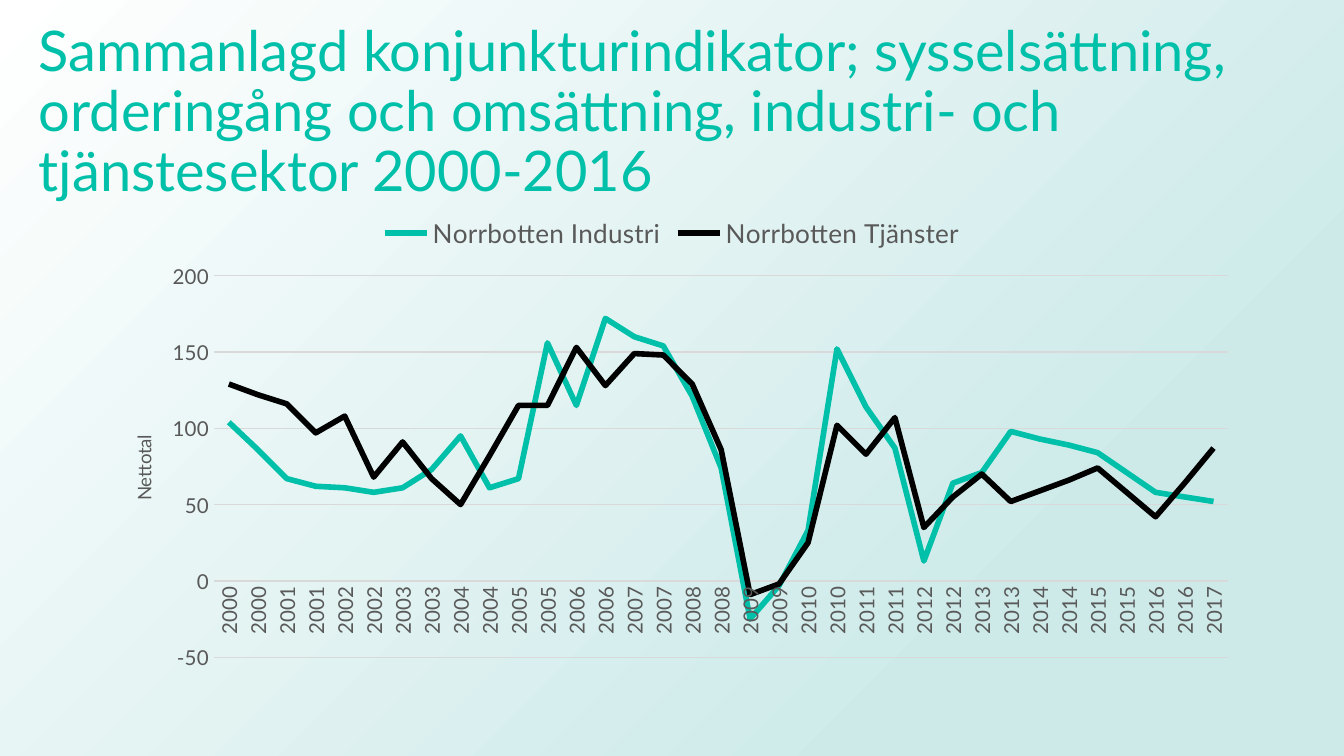
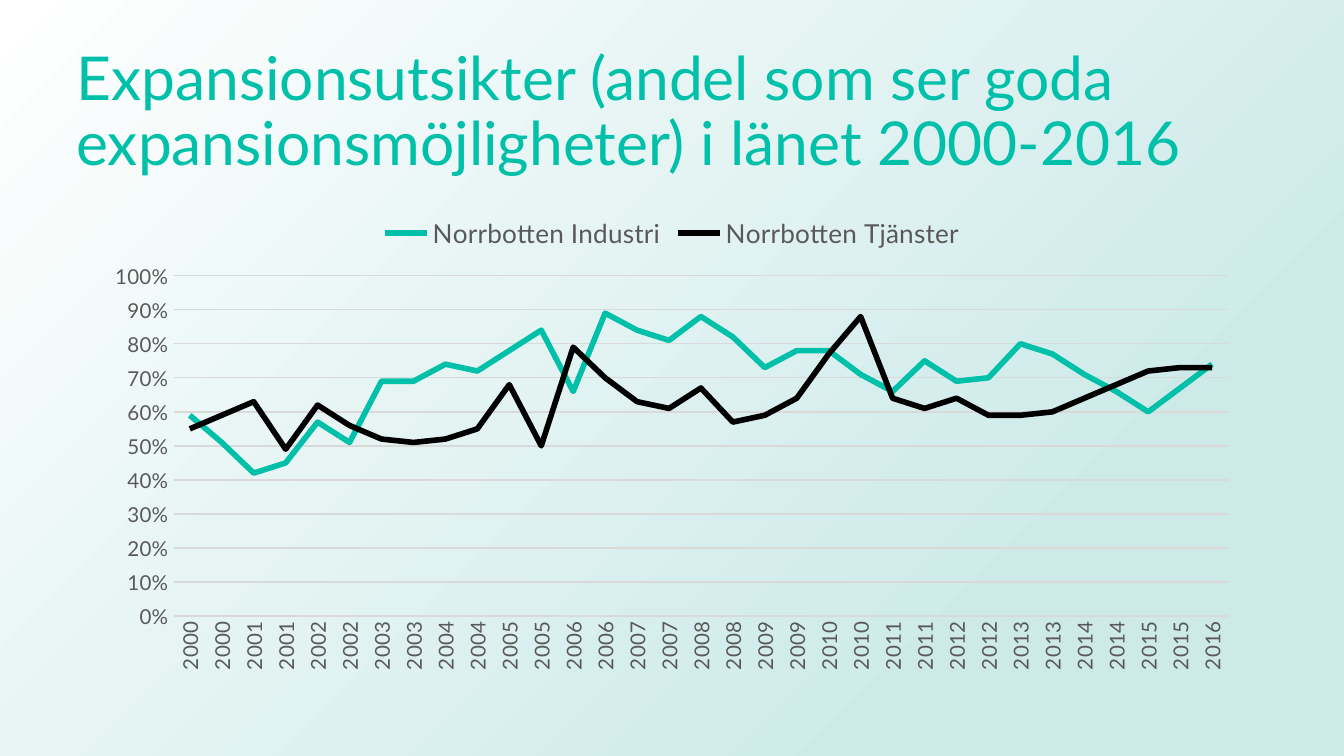
from dataclasses import dataclass
from itertools import islice

from pptx import Presentation
from pptx.chart.chart import Chart
from pptx.chart.data import CategoryChartData
from pptx.dml.color import RGBColor
from pptx.enum.chart import XL_CHART_TYPE, XL_LEGEND_POSITION, XL_TICK_MARK
from pptx.enum.shapes import MSO_SHAPE
from pptx.enum.text import MSO_ANCHOR
from pptx.oxml import parse_xml
from pptx.oxml.ns import nsdecls, qn
from pptx.slide import Slide
from pptx.util import Inches, Pt

TEAL = RGBColor(0x00, 0xC0, 0xA9)
BLACK = RGBColor(0x00, 0x00, 0x00)
GREY_TEXT = RGBColor(0x59, 0x59, 0x59)
GREY_LINE = RGBColor(0xD9, 0xD9, 0xD9)
PALE_TEAL = RGBColor(0xCD, 0xEA, 0xE9)
WHITE = RGBColor(0xFF, 0xFF, 0xFF)

FONT = "Lato"
SLIDE_WIDTH = Inches(10)
SLIDE_HEIGHT = SLIDE_WIDTH * 9 // 16
COLUMN = SLIDE_WIDTH // 10
ROW = SLIDE_HEIGHT // 9
VERTICAL = "-5400000"

SERIES_COLORS = {"Norrbotten Industri": TEAL, "Norrbotten Tjänster": BLACK}


@dataclass(frozen=True)
class Area:
    """A rectangle in columns and rows of the slide, or in shares of a chart."""
    left: float
    top: float
    width: float
    height: float

    def on_grid(self) -> tuple[int, ...]:
        return (round(self.left * COLUMN), round(self.top * ROW),
                round(self.width * COLUMN), round(self.height * ROW))


@dataclass(frozen=True)
class ValueScale:
    minimum: float
    maximum: float
    step: float
    number_format: str
    title: str = ""


@dataclass(frozen=True)
class IndicatorSlide:
    title: str
    title_area: Area
    title_size: float
    plot_area: Area
    scale: ValueScale
    industry: list[float]
    services: list[float]


CHART_AREA = Area(0.69, 2.4, 8.62, 5.7)

INDICATOR_SLIDES = [
    IndicatorSlide(
        title="Sammanlagd konjunkturindikator; sysselsättning, orderingång "
              "och omsättning, industri- och tjänstesektor 2000-2016",
        title_area=Area(0.19, 0.48, 10.02, 1.74),
        title_size=30,
        plot_area=Area(0.105, 0.155, 0.875, 0.797),
        scale=ValueScale(-50, 200, 50, "0", "Nettotal"),
        industry=[104, 86, 67, 62, 61, 58, 61, 73, 95, 61, 67, 156, 115, 172,
                  160, 154, 121, 74, -25, -3, 33, 152, 114, 87, 13, 64, 71,
                  98, 93, 89, 84, 71, 58, 55, 52],
        services=[129, 122, 116, 97, 108, 68, 91, 67, 50, 82, 115, 115, 153,
                  128, 149, 148, 129, 86, -9, -2, 25, 102, 83, 107, 35, 55,
                  70, 52, 59, 66, 74, 58, 42, 64, 87],
    ),
    IndicatorSlide(
        title="Expansionsutsikter (andel som ser goda "
              "expansionsmöjligheter) i länet 2000-2016",
        title_area=Area(0.47, 0.48, 8.85, 1.74),
        title_size=32.4,
        plot_area=Area(0.07, 0.155, 0.91, 0.711),
        scale=ValueScale(0, 1, 0.1, "0%"),
        industry=[0.59, 0.51, 0.42, 0.45, 0.57, 0.51, 0.69, 0.69, 0.74, 0.72,
                  0.78, 0.84, 0.66, 0.89, 0.84, 0.81, 0.88, 0.82, 0.73, 0.78,
                  0.78, 0.71, 0.66, 0.75, 0.69, 0.7, 0.8, 0.77, 0.71, 0.66,
                  0.6, 0.67, 0.74],
        services=[0.55, 0.59, 0.63, 0.49, 0.62, 0.56, 0.52, 0.51, 0.52, 0.55,
                  0.68, 0.5, 0.79, 0.7, 0.63, 0.61, 0.67, 0.57, 0.59, 0.64,
                  0.77, 0.88, 0.64, 0.61, 0.64, 0.59, 0.59, 0.6, 0.64, 0.68,
                  0.72, 0.73, 0.73],
    ),
]


def set_attributes(target, **values) -> None:
    for name, value in values.items():
        setattr(target, name, value)


def format_font(font, size: float, color: RGBColor) -> None:
    set_attributes(font, name=FONT, size=Pt(size), bold=False)
    font.color.rgb = color


def format_line(line, width: float, color: RGBColor) -> None:
    line.color.rgb = color
    line.width = Pt(width)


def half_years(count: int) -> list[str]:
    """Name each half-year by its year, so that every year comes twice."""
    return list(islice((str(2000 + index // 2) for index in range(100)), count))


def manual_layout(left: float, top: float, size: str = "", target: str = ""):
    return parse_xml(
        f'<c:layout {nsdecls("c")}><c:manualLayout>{target}'
        '<c:xMode val="edge"/><c:yMode val="edge"/>'
        f'<c:x val="{left}"/><c:y val="{top}"/>{size}'
        '</c:manualLayout></c:layout>')


def add_background(slide: Slide) -> None:
    """Cover the slide with a radial gradient that starts bottom right."""
    shape = slide.shapes.add_shape(
        MSO_SHAPE.RECTANGLE, 0, 0, SLIDE_WIDTH, SLIDE_HEIGHT)
    shape.shadow.inherit = False
    shape.line.fill.background()
    shape.fill.gradient()
    stops = "".join(
        f'<a:gs pos="{share * 1000}"><a:srgbClr val="{color}"/></a:gs>'
        for share, color in ((23, PALE_TEAL), (100, WHITE)))
    gradient = parse_xml(
        f'<a:gradFill {nsdecls("a")} rotWithShape="1"><a:gsLst>{stops}</a:gsLst>'
        '<a:path path="circle"><a:fillToRect l="100000" t="100000"/></a:path>'
        '</a:gradFill>')
    properties = shape._element.spPr
    properties.replace(properties.find(qn("a:gradFill")), gradient)


def add_title(slide: Slide, content: IndicatorSlide) -> None:
    frame = slide.shapes.add_textbox(*content.title_area.on_grid()).text_frame
    set_attributes(frame, word_wrap=True, vertical_anchor=MSO_ANCHOR.MIDDLE)
    paragraph = frame.paragraphs[0]
    paragraph.line_spacing = 0.9
    run = paragraph.add_run()
    run.text = content.title
    format_font(run.font, content.title_size, TEAL)


def format_axes(chart: Chart, scale: ValueScale) -> None:
    years, values = chart.category_axis, chart.value_axis
    for axis in (years, values):
        set_attributes(axis, major_tick_mark=XL_TICK_MARK.NONE,
                       minor_tick_mark=XL_TICK_MARK.NONE)
        format_font(axis.tick_labels.font, 11, GREY_TEXT)
    format_line(years.format.line, 0.75, GREY_LINE)
    years._element.find(qn("c:txPr")).find(qn("a:bodyPr")).set("rot", VERTICAL)

    set_attributes(values, minimum_scale=scale.minimum,
                   maximum_scale=scale.maximum, major_unit=scale.step,
                   has_major_gridlines=True)
    set_attributes(values.tick_labels, number_format=scale.number_format,
                   number_format_is_linked=False)
    values.format.line.fill.background()
    format_line(values.major_gridlines.format.line, 0.75, GREY_LINE)
    if scale.title:
        add_value_title(values, scale.title)


def add_value_title(axis, text: str) -> None:
    frame = axis.axis_title.text_frame
    frame.text = text
    format_font(frame.paragraphs[0].runs[0].font, 10, GREY_TEXT)
    frame._txBody.find(qn("a:bodyPr")).set("rot", VERTICAL)
    title = axis.axis_title._element
    for layout in title.findall(qn("c:layout")):
        title.remove(layout)
    title.find(qn("c:tx")).addnext(manual_layout(0.03, 0.48))


def place_plot(chart: Chart, area: Area) -> None:
    plot_area = chart._chartSpace.chart.plotArea
    for layout in plot_area.findall(qn("c:layout")):
        plot_area.remove(layout)
    plot_area.insert(0, manual_layout(
        area.left, area.top,
        size=f'<c:w val="{area.width}"/><c:h val="{area.height}"/>',
        target='<c:layoutTarget val="inner"/>'))


def add_line_chart(slide: Slide, content: IndicatorSlide) -> None:
    data = CategoryChartData()
    data.categories = half_years(len(content.industry))
    for name, values in zip(SERIES_COLORS, (content.industry, content.services)):
        data.add_series(name, values, content.scale.number_format)
    chart = slide.shapes.add_chart(
        XL_CHART_TYPE.LINE, *CHART_AREA.on_grid(), data).chart
    set_attributes(chart, has_title=False, has_legend=True)
    set_attributes(chart.font, name="Calibri", size=Pt(10))
    chart.font.color.rgb = BLACK
    set_attributes(chart.legend, position=XL_LEGEND_POSITION.TOP,
                   include_in_layout=False)
    format_font(chart.legend.font, 14, GREY_TEXT)
    chart.plots[0].vary_by_categories = False
    for series in chart.plots[0].series:
        series.smooth = False
        format_line(series.format.line, 3, SERIES_COLORS[series.name])
    format_axes(chart, content.scale)
    place_plot(chart, content.plot_area)


def main() -> None:
    presentation = Presentation()
    set_attributes(presentation, slide_width=SLIDE_WIDTH,
                   slide_height=SLIDE_HEIGHT)
    for content in INDICATOR_SLIDES:
        slide = presentation.slides.add_slide(presentation.slide_layouts[6])
        add_background(slide)
        add_title(slide, content)
        add_line_chart(slide, content)
    presentation.save("out.pptx")


if __name__ == "__main__":
    main()
